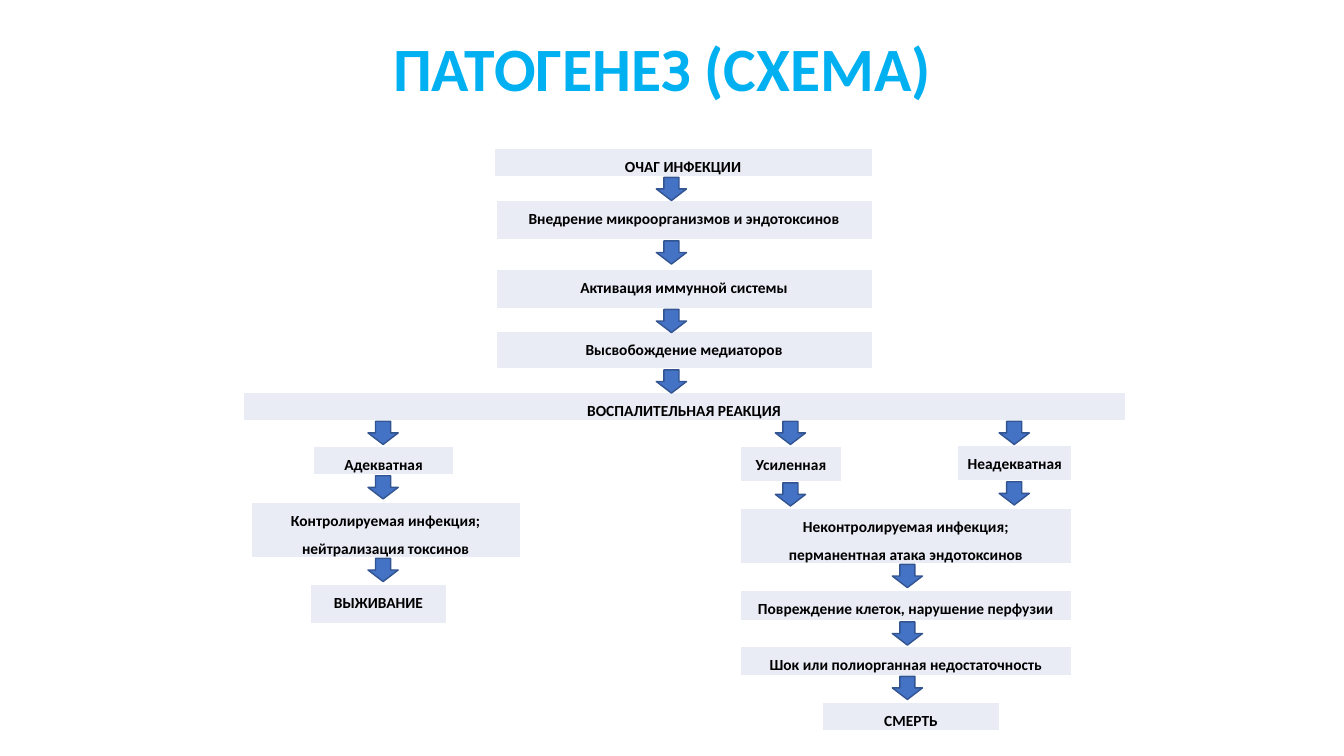
from lxml import etree
from pptx import Presentation
from pptx import util as u
from pptx.dml.color import RGBColor
from pptx.enum import shapes, text
from pptx.oxml import ns

# Content: stage columns as left edge and width, in inches
COLUMNS = {
    "trunk": (4.92, 3.73),
    "focus": (4.9, 3.75),
    "reaction": (2.41, 8.75),
    "adequate": (3.11, 1.39),
    "controlled": (2.49, 2.67),
    "survival": (3.08, 1.35),
    "strong": (7.34, 1.01),
    "inadequate": (9.5, 1.13),
    "uncontrolled": (7.34, 3.29),
    "death": (8.16, 1.75),
}
# Centres of the lanes along which arrows run
MAIN, LEFT, STRONG, INADEQUATE, RIGHT = 6.66, 3.8, 7.84, 10.06, 9.0

# Wording, column, top, height, lanes of the arrows that leave the stage
STAGES = [
    ("ОЧАГ ИНФЕКЦИИ", "focus", 1.47, 0.28, [MAIN]),
    ("Внедрение микроорганизмов и эндотоксинов", "trunk", 1.99, 0.39, [MAIN]),
    ("Активация иммунной системы", "trunk", 2.67, 0.39, [MAIN]),
    ("Высвобождение медиаторов", "trunk", 3.29, 0.37, [MAIN]),
    ("ВОСПАЛИТЕЛЬНАЯ РЕАКЦИЯ", "reaction", 3.89, 0.28, [LEFT, STRONG, INADEQUATE]),
    ("Адекватная", "adequate", 4.43, 0.28, [LEFT]),
    ("Контролируемая инфекция; нейтрализация токсинов", "controlled", 4.98, 0.55, [LEFT]),
    ("ВЫЖИВАНИЕ", "survival", 5.8, 0.39, []),
    ("Усиленная", "strong", 4.43, 0.35, [STRONG]),
    ("Неадекватная", "inadequate", 4.42, 0.35, [INADEQUATE]),
    ("Неконтролируемая инфекция;\nперманентная атака эндотоксинов",
     "uncontrolled", 5.04, 0.55, [RIGHT]),
    ("Повреждение клеток, нарушение перфузии", "uncontrolled", 5.86, 0.3, [RIGHT]),
    ("Шок или полиорганная недостаточность", "uncontrolled", 6.41, 0.29, [RIGHT]),
    ("СМЕРТЬ", "death", 6.97, 0.28, []),
]

FONT = "Calibri"
SKY = RGBColor(0x00, 0xB0, 0xF0)
BLACK = RGBColor(0x00, 0x00, 0x00)
PALE = RGBColor(0xE9, 0xEB, 0xF5)
BLUE = RGBColor(0x44, 0x72, 0xC4)
NAVY = RGBColor(0x32, 0x54, 0x91)
WHITE = RGBColor(0xFF, 0xFF, 0xFF)
ARROW_WIDTH, ARROW_HEIGHT, ARROW_GAP = 0.3, 0.23, 0.01


def inches(*lengths):
    return [u.Inches(length) for length in lengths]


def style_text(frame, size, color, spacing):
    for paragraph in frame.paragraphs:
        paragraph.alignment = text.PP_ALIGN.CENTER
        paragraph.line_spacing = spacing
        for run in paragraph.runs:
            run.font.name, run.font.size, run.font.bold = FONT, u.Pt(size), True
            run.font.color.rgb = color


def add_borders(cell):
    properties = cell._tc.get_or_add_tcPr()
    for index, side in enumerate(("lnL", "lnR", "lnT", "lnB")):
        border = etree.Element(ns.qn(f"a:{side}"), w=str(u.Pt(1)))
        fill = etree.SubElement(border, ns.qn("a:solidFill"))
        etree.SubElement(fill, ns.qn("a:srgbClr"), val=str(WHITE))
        properties.insert(index, border)


def add_stage(slide, wording, column, top, height):
    left, width = COLUMNS[column]
    table = slide.shapes.add_table(1, 1, *inches(left, top, width, height)).table
    table.first_row = table.horz_banding = False
    cell = table.cell(0, 0)
    cell.margin_left = cell.margin_right = u.Inches(0.07)
    cell.margin_top = cell.margin_bottom = 0
    cell.fill.solid()
    cell.fill.fore_color.rgb = PALE
    add_borders(cell)
    cell.text_frame.text = wording
    style_text(cell.text_frame, 11, BLACK, 1.5)


def add_arrow(slide, lane, top):
    arrow = slide.shapes.add_shape(
        shapes.MSO_SHAPE.DOWN_ARROW,
        *inches(lane - ARROW_WIDTH / 2, top, ARROW_WIDTH, ARROW_HEIGHT))
    arrow.shadow.inherit = False
    arrow.fill.solid()
    arrow.fill.fore_color.rgb = BLUE
    arrow.line.color.rgb = NAVY
    arrow.line.width = u.Pt(1)


def main():
    deck = Presentation()
    deck.slide_width, deck.slide_height = inches(13.33, 7.5)
    slide = deck.slides.add_slide(deck.slide_layouts[6])

    # Title
    title = slide.shapes.add_textbox(*inches(1.2, 0.31, 10.74, 0.8)).text_frame
    title.word_wrap = True
    title.vertical_anchor = text.MSO_ANCHOR.MIDDLE
    title.text = "ПАТОГЕНЕЗ (СХЕМА)"
    style_text(title, 44, SKY, 0.9)

    # Stages, then the arrows that start at their lower edges
    for wording, column, top, height, _ in STAGES:
        add_stage(slide, wording, column, top, height)
    for _, _, top, height, lanes in STAGES:
        for lane in lanes:
            add_arrow(slide, lane, top + height + ARROW_GAP)

    deck.save("out.pptx")


if __name__ == "__main__":
    main()
